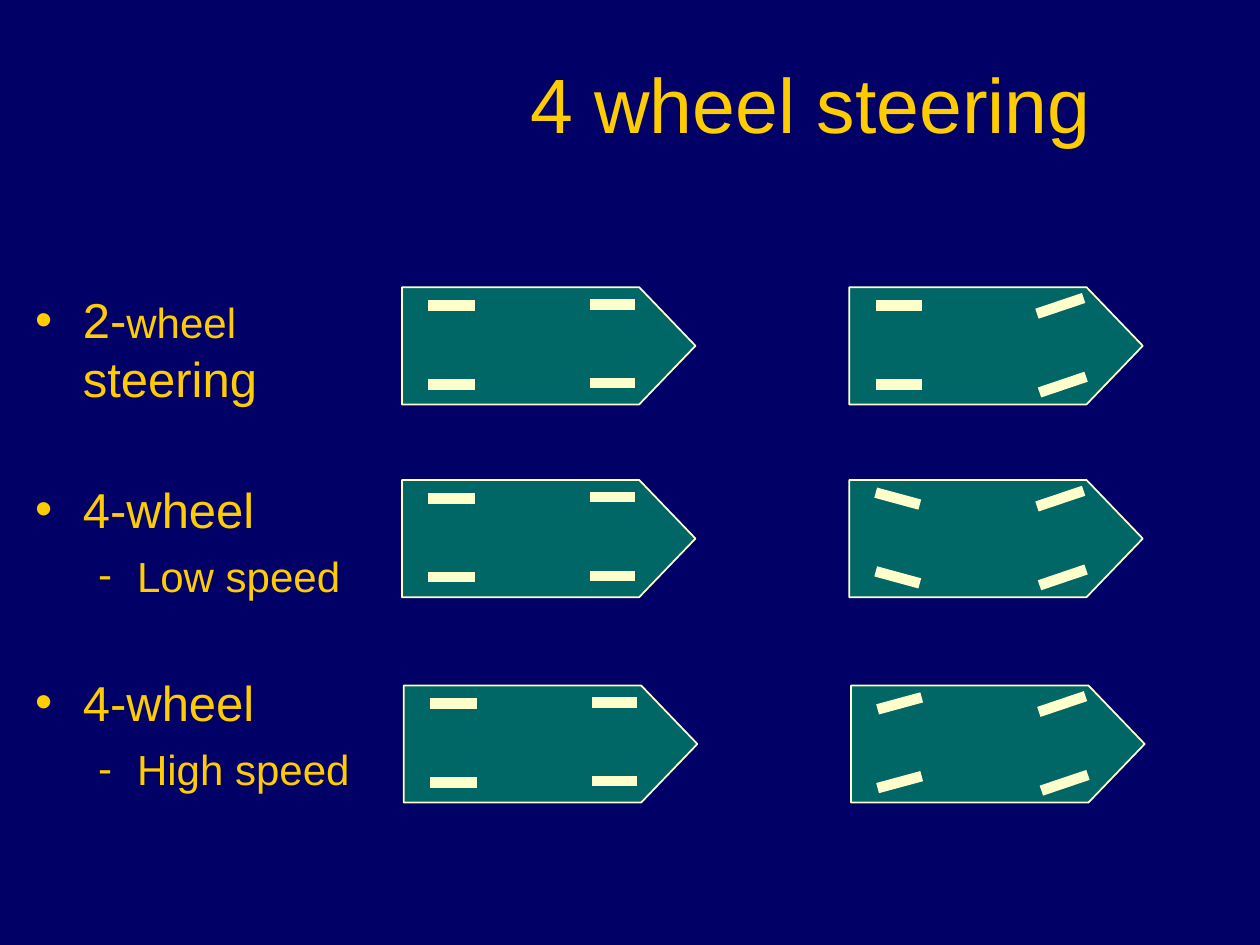
from dataclasses import dataclass

from lxml import etree
from pptx import Presentation
from pptx.dml.color import RGBColor
from pptx.enum.shapes import MSO_CONNECTOR, MSO_SHAPE
from pptx.enum.text import MSO_ANCHOR, PP_ALIGN
from pptx.oxml.ns import qn
from pptx.util import Inches, Pt

PENTAGON = MSO_SHAPE.PENTAGON
STRAIGHT = MSO_CONNECTOR.STRAIGHT
TOP, MIDDLE = MSO_ANCHOR.TOP, MSO_ANCHOR.MIDDLE
LEFT, RIGHT = PP_ALIGN.LEFT, PP_ALIGN.RIGHT


@dataclass(frozen=True)
class Theme:
    font: str = "Arial"
    back: str = "000066"
    text: str = "FFCC00"
    body: str = "006666"
    wheel: str = "FFFFCC"
    shadow: str = "000000"
    title: int = 44
    large: int = 28
    small: int = 24


THEME = Theme()
COLUMNS = 100
WHEEL_TRACK = 6.25
BODY_SIZE = (23.3, 9.3)
BODY_COLUMNS = (31.9, 67.4)

REAR_STRAIGHT = (2.1, 1.45, 3.7, 0, 0)
REAR_DOWN = (2.1, 1, 3.5, 0.95, 0)
REAR_UP = (2.1, 1.9, 3.5, -0.95, 0)
FRONT_STRAIGHT = (14.9, 1.35, 3.6, 0, 0)
FRONT_UP = (14.9, 2.1, 3.7, -1.25, 0.2)

CAR_ROWS = [
    (0, 22.8, REAR_STRAIGHT),
    (0, 38.1, REAR_DOWN),
    (0.15, 54.4, REAR_UP),
]

ITEMS = [
    (0, 0, [("2-", THEME.large), ("wheel", THEME.small), (" steering", THEME.large)]),
    (0, 41, [("4-wheel", THEME.large)]),
    (1, 7, [("Low speed", THEME.small)]),
    (0, 41, [("4-wheel", THEME.large)]),
    (1, 7, [("High speed", THEME.small)]),
]
LEVELS = [("•", 0.38, 0.38), ("-", 0.81, 0.31)]


def add_text(para, text, *, size, color, font, shadow):
    span = para.add_run()
    span.text = text
    span.font.size = Pt(size)
    span.font.color.rgb = RGBColor.from_string(color)
    effects = etree.SubElement(span.font._element, qn("a:effectLst"))
    outer = etree.SubElement(effects, qn("a:outerShdw"), dist="38100", dir="2700000")
    etree.SubElement(outer, qn("a:srgbClr"), val=shadow)
    span.font.name = font


class Painter:
    def __init__(self, deck, theme):
        self.theme = theme
        self.cell = deck.slide_width / COLUMNS
        self.page = deck.slides.add_slide(deck.slide_layouts[6])
        fill = self.page.background.fill
        fill.solid()
        fill.fore_color.rgb = RGBColor.from_string(theme.back)

    def grid(self, *lengths):
        return [round(length * self.cell) for length in lengths]

    def frame(self, place, anchor):
        box = self.page.shapes.add_textbox(*self.grid(*place))
        box.text_frame.word_wrap = True
        box.text_frame.vertical_anchor = anchor
        return box.text_frame

    def label(self, para, text, size):
        theme = self.theme
        add_text(para, text, size=size, color=theme.text, font=theme.font, shadow=theme.shadow)

    def title(self, text, place):
        para = self.frame(place, MIDDLE).paragraphs[0]
        para.alignment = RIGHT
        self.label(para, text, self.theme.title)

    def bullet(self, para, level):
        sign, margin, hang = LEVELS[level]
        props = para._p.get_or_add_pPr()
        props.set("marL", str(Inches(margin)))
        props.set("indent", str(-Inches(hang)))
        color = etree.SubElement(props, qn("a:buClr"))
        etree.SubElement(color, qn("a:srgbClr"), val=self.theme.text)
        etree.SubElement(props, qn("a:buFont"), typeface=self.theme.font)
        etree.SubElement(props, qn("a:buChar"), char=sign)
        para.level = level

    def outline(self, items, place):
        frame = self.frame(place, TOP)
        frame.margin_top = Inches(0.1)
        for index, (level, gap, spans) in enumerate(items):
            para = frame.add_paragraph() if index else frame.paragraphs[0]
            self.bullet(para, level)
            para.alignment = LEFT
            if gap:
                para.space_before = Pt(gap)
            for text, size in spans:
                self.label(para, text, size)

    def wheel(self, left, top, run, rise):
        line = self.page.shapes.add_connector(
            STRAIGHT, *self.grid(left, top, left + run, top + rise)
        )
        line.line.color.rgb = RGBColor.from_string(self.theme.wheel)
        line.line.width = Pt(6)
        etree.SubElement(line._element.spPr, qn("a:effectLst"))

    def car(self, left, top, axles):
        body = self.page.shapes.add_shape(PENTAGON, *self.grid(left, top, *BODY_SIZE))
        body.adjustments[0] = 0.48
        body.shadow.inherit = False
        body.fill.solid()
        body.fill.fore_color.rgb = RGBColor.from_string(self.theme.body)
        body.line.color.rgb = RGBColor.from_string(self.theme.wheel)
        body.line.width = Pt(1)
        for across, down, run, rise, shift in axles:
            for side in range(2):
                self.wheel(
                    left + across + side * shift, top + down + side * WHEEL_TRACK, run, rise
                )


def main():
    deck = Presentation()
    deck.slide_width, deck.slide_height = Inches(10), Inches(7.5)
    painter = Painter(deck, THEME)
    painter.title("4 wheel steering", (0, 1.9, 87.6, 12.5))
    painter.outline(ITEMS, (1.8, 22, 29.4, 45))
    for shift, top, rear in CAR_ROWS:
        for left, axles in zip(
            BODY_COLUMNS, ((REAR_STRAIGHT, FRONT_STRAIGHT), (rear, FRONT_UP))
        ):
            painter.car(left + shift, top, axles)
    deck.save("out.pptx")


if __name__ == "__main__":
    main()
